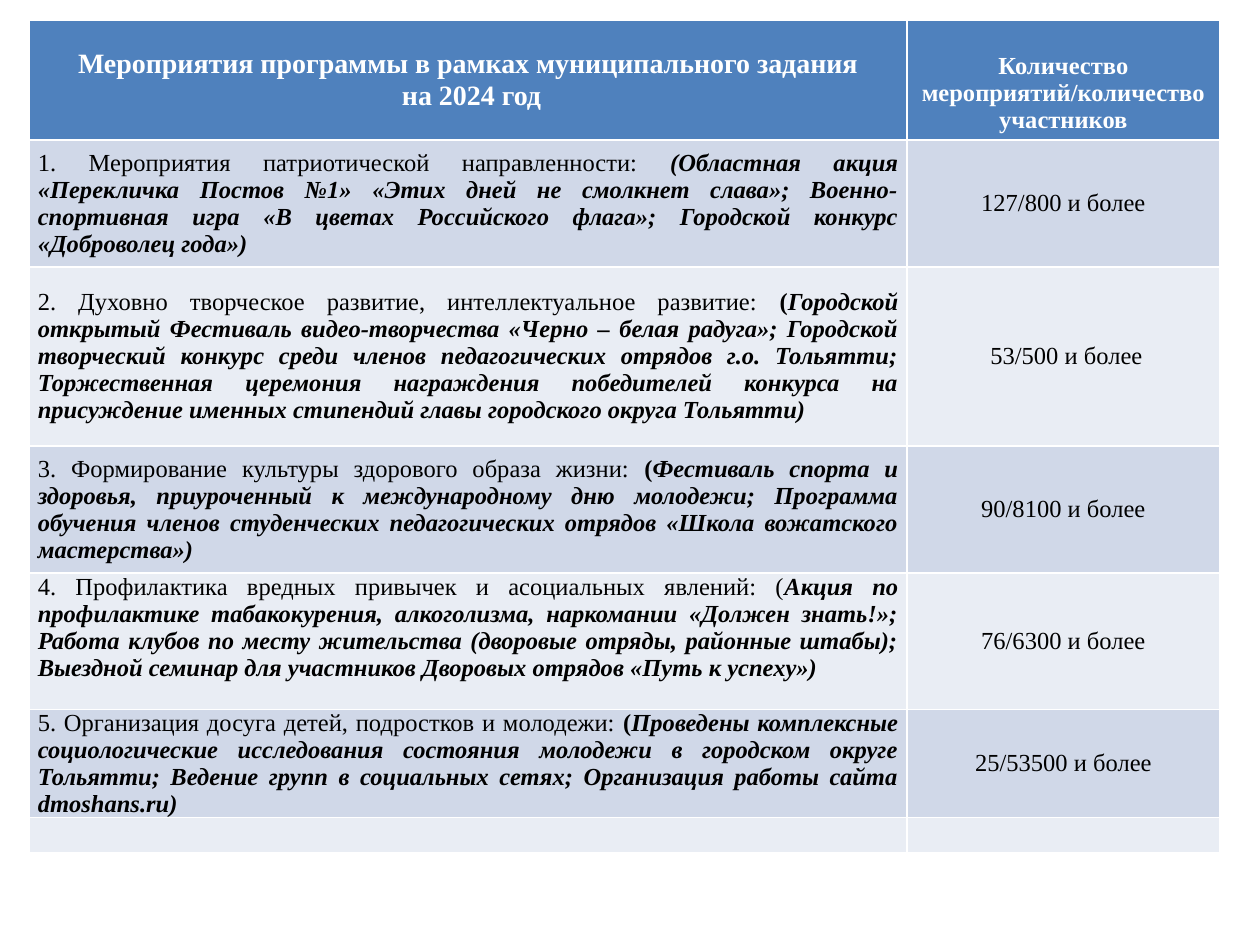
from pptx import Presentation
from pptx.dml.color import RGBColor
from pptx.enum.text import MSO_ANCHOR as ANCHOR, PP_ALIGN as ALIGN
from pptx.util import Inches, Pt

FONT = "Times New Roman"
WHITE = RGBColor(0xFF, 0xFF, 0xFF)
BLACK = RGBColor(0x00, 0x00, 0x00)
HEADER_BLUE = RGBColor(0x4F, 0x81, 0xBD)
BANDS = (RGBColor(0xD0, 0xD8, 0xE8), RGBColor(0xE9, 0xED, 0xF4))

COLUMNS = (6.97, 2.48)
HEADER_HEIGHT, LAST_HEIGHT = 0.95, 0.28

# Row height, anchor, plain lead, bold bracket, bold italic details, count
ACTIVITIES = [
    (1.01, ANCHOR.MIDDLE, "1. Мероприятия патриотической направленности: ", "",
     "(Областная акция «Перекличка Постов №1» «Этих дней не смолкнет слава»; "
     "Военно-спортивная игра «В цветах Российского флага»; "
     "Городской конкурс «Доброволец года»)", "127/800 и более"),
    (1.42, ANCHOR.MIDDLE,
     "2. Духовно творческое развитие, интеллектуальное развитие: ", "(",
     "Городской открытый Фестиваль видео-творчества «Черно – белая радуга»; "
     "Городской творческий конкурс среди членов педагогических отрядов г.о. Тольятти; "
     "Торжественная церемония награждения победителей конкурса на присуждение "
     "именных стипендий главы городского округа Тольятти)", " 53/500 и более"),
    (1.01, ANCHOR.MIDDLE, "3. Формирование культуры здорового образа жизни: ", "(",
     "Фестиваль спорта и здоровья, приуроченный к международному дню молодежи; "
     "Программа обучения членов студенческих педагогических отрядов "
     "«Школа вожатского мастерства»)", "90/8100 и более"),
    (1.08, ANCHOR.TOP, "4. Профилактика вредных привычек и асоциальных явлений: (", "",
     "Акция по профилактике табакокурения, алкоголизма, наркомании «Должен знать!»; "
     "Работа клубов по месту жительства (дворовые отряды, районные штабы); "
     "Выездной семинар для участников Дворовых отрядов «Путь к успеху»)",
     "76/6300 и более"),
    (0.86, ANCHOR.MIDDLE, "5. Организация досуга детей, подростков и молодежи: ", "(",
     "Проведены комплексные социологические исследования состояния молодежи "
     "в городском округе Тольятти; Ведение групп в социальных сетях; "
     "Организация работы сайта dmoshans.ru)", "25/53500 и более"),
]


def format_paragraph(p, size, color, align, bold=False):
    p.alignment = align
    font = p.font
    font.name, font.size, font.bold = FONT, Pt(size), bold
    font.color.rgb = color


def fill_cell(cell, color, anchor=ANCHOR.MIDDLE):
    cell.fill.solid()
    cell.fill.fore_color.rgb = color
    cell.vertical_anchor = anchor


def fill_header(cell, lines, size, anchor):
    fill_cell(cell, HEADER_BLUE, anchor)
    tf = cell.text_frame
    tf.text = "\n".join(lines)
    for p in tf.paragraphs:
        format_paragraph(p, size, WHITE, ALIGN.CENTER, bold=True)


def fill_body(cell, color, runs, align, anchor=ANCHOR.MIDDLE):
    """Write (text, bold, italic) runs into one body cell."""
    fill_cell(cell, color, anchor)
    cell.margin_left = cell.margin_right = Inches(0.07)
    cell.margin_top = cell.margin_bottom = 0
    p = cell.text_frame.paragraphs[0]
    format_paragraph(p, 14, BLACK, align)
    for text, bold, italic in runs:
        if text:
            r = p.add_run()
            r.text = text
            r.font.bold, r.font.italic = bold, italic


def add_activity_table(s, left, top):
    heights = [HEADER_HEIGHT, *(row[0] for row in ACTIVITIES), LAST_HEIGHT]
    table = s.shapes.add_table(
        len(heights), len(COLUMNS), Inches(left), Inches(top),
        Inches(sum(COLUMNS)), Inches(sum(heights))).table
    for column, width in zip(table.columns, COLUMNS):
        column.width = Inches(width)
    for row, height in zip(table.rows, heights):
        row.height = Inches(height)

    fill_header(table.cell(0, 0),
                ["Мероприятия программы в рамках муниципального задания",
                 " на 2024 год"], 16, ANCHOR.MIDDLE)
    fill_header(table.cell(0, 1),
                ["Количество мероприятий/количество участников"], 14, ANCHOR.BOTTOM)

    for i, (_, anchor, lead, bracket, details, count) in enumerate(ACTIVITIES):
        color = BANDS[i % 2]
        runs = [(lead, False, False), (bracket, True, False), (details, True, True)]
        fill_body(table.cell(i + 1, 0), color, runs, ALIGN.JUSTIFY, anchor)
        fill_body(table.cell(i + 1, 1), color, [(count, False, False)], ALIGN.CENTER)

    last = len(heights) - 1
    for col in range(len(COLUMNS)):
        fill_body(table.cell(last, col), BANDS[1], [], ALIGN.LEFT)


def main():
    prs = Presentation()
    prs.slide_width, prs.slide_height = Inches(10), Inches(7.5)
    s = prs.slides.add_slide(prs.slide_layouts[6])
    add_activity_table(s, 0.23, 0.16)
    prs.save("out.pptx")


if __name__ == "__main__":
    main()
